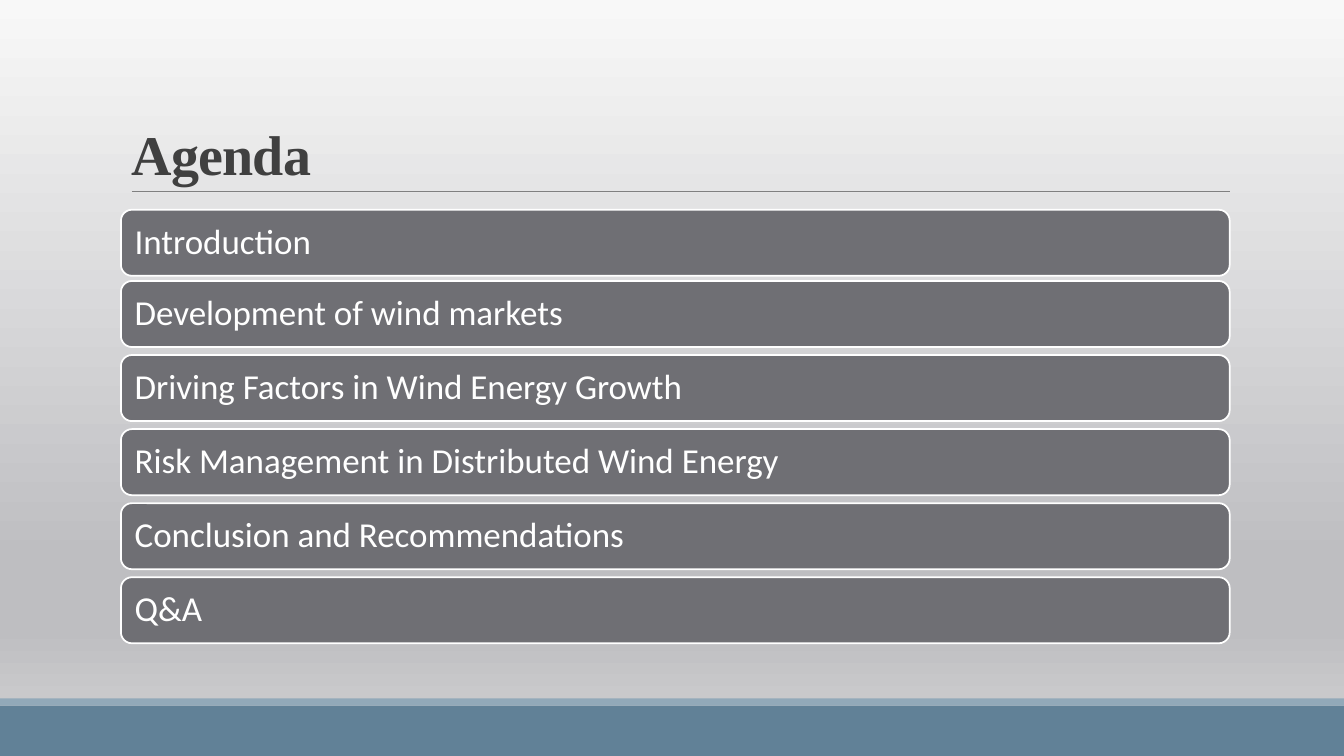
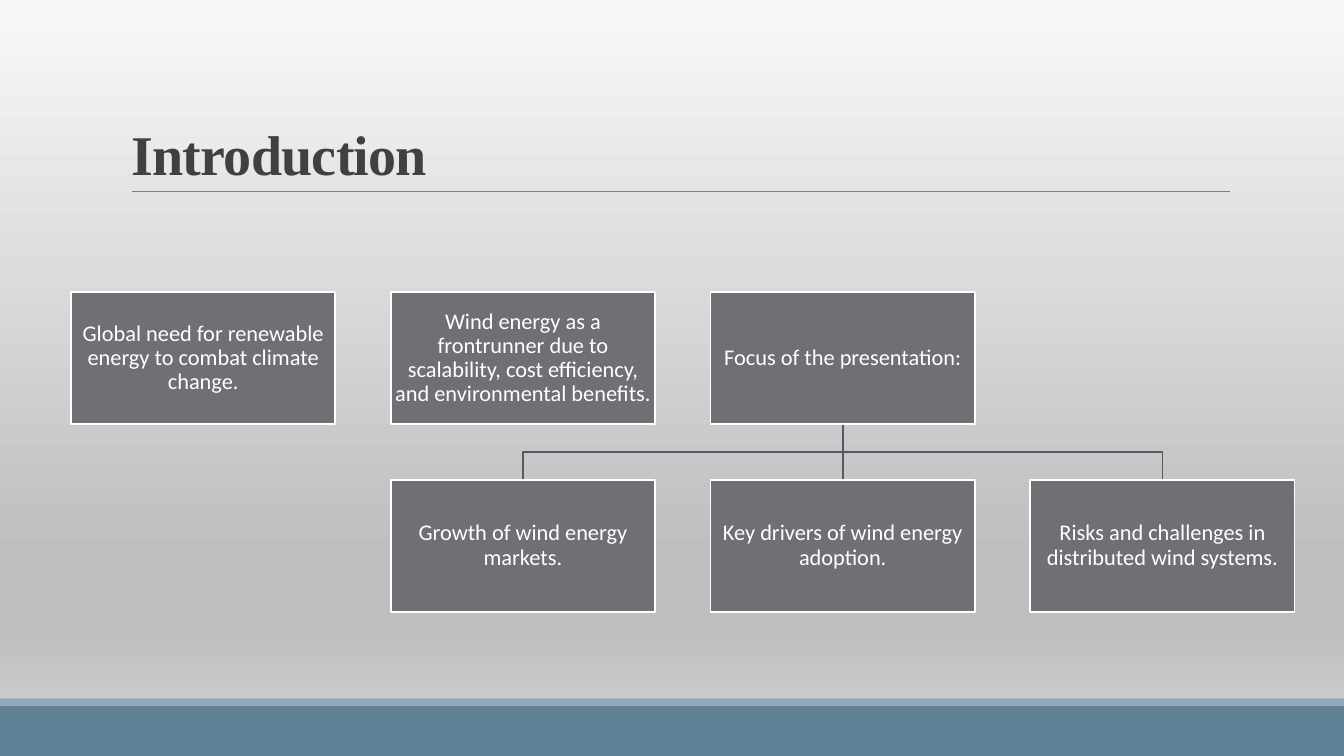
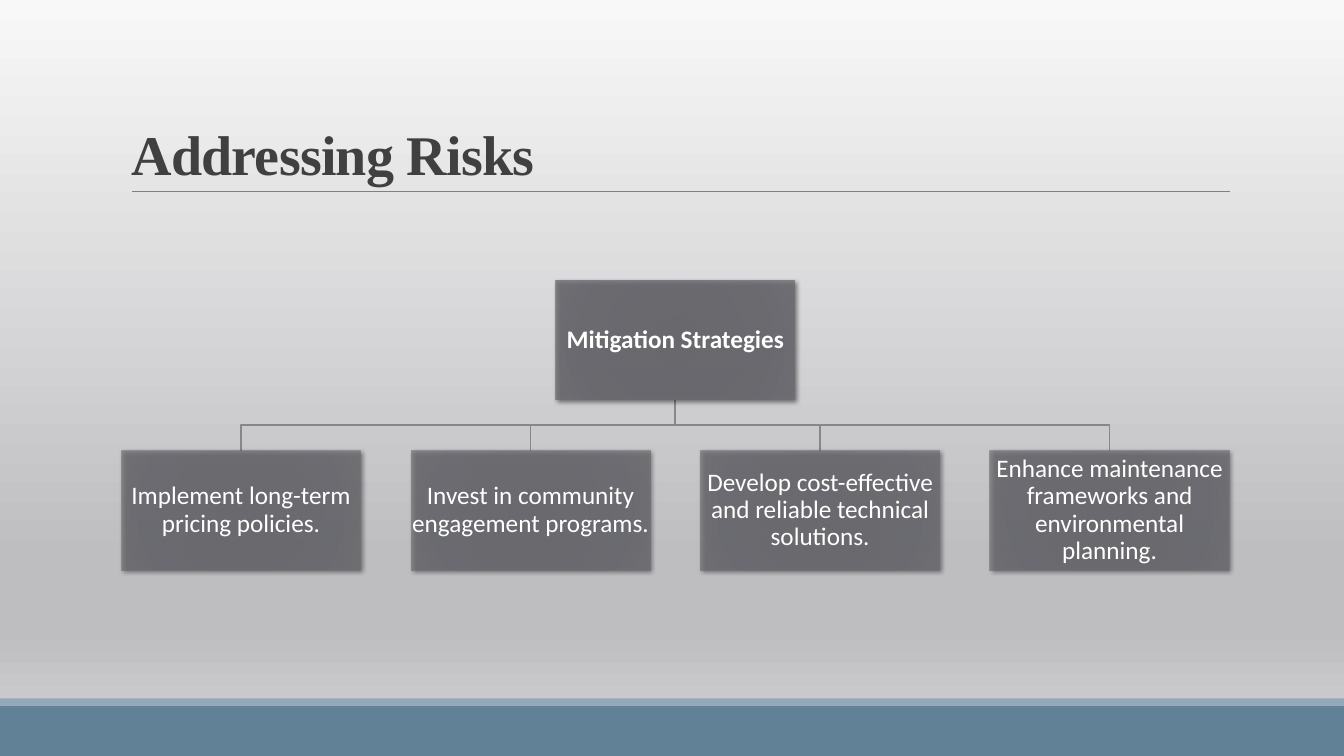
from collections import namedtuple

from lxml.etree import SubElement
from pptx import Presentation
from pptx.dml.color import RGBColor
from pptx.enum.shapes import MSO_CONNECTOR, MSO_SHAPE
from pptx.enum.text import MSO_ANCHOR, PP_ALIGN
from pptx.oxml.ns import qn
from pptx.util import Pt

SLIDE_WIDTH, SLIDE_HEIGHT = 960, 540

WHITE = RGBColor(0xFF, 0xFF, 0xFF)
TITLE_GRAY = RGBColor(0x40, 0x40, 0x40)
RULE_GRAY = RGBColor(0x80, 0x80, 0x80)
BOX_GRAY = RGBColor(0x6F, 0x6F, 0x74)
DARK_BRANCH = RGBColor(0x59, 0x59, 0x5D)
LIGHT_BRANCH = RGBColor(0x87, 0x87, 0x8B)
BAND_BLUE = RGBColor(0x61, 0x81, 0x97)
STRIPE_BLUE = RGBColor(0x92, 0xA9, 0xB9)

BACKGROUND_STOPS = [
    (0, RGBColor(0xF8, 0xF8, 0xF8)),
    (74, RGBColor(0xBE, 0xBE, 0xC1)),
    (83, RGBColor(0xBE, 0xBE, 0xC1)),
    (100, RGBColor(0xD4, 0xD4, 0xD5)),
]
GLASS_STOPS = [
    (0, RGBColor(0x67, 0x67, 0x6D)),
    (34, RGBColor(0x68, 0x68, 0x6E)),
    (70, RGBColor(0x69, 0x69, 0x70)),
    (100, BOX_GRAY),
]

TITLE_FONT = "Times New Roman"
BODY_FONT = "Calibri"
BRANCH_WIDTH = 1.25

Box = namedtuple("Box", "left top width height")


def center(box):
    return box.left + box.width / 2


def bottom(box):
    return box.top + box.height


def row_of_boxes(first, pitch, count):
    return [first._replace(left=first.left + pitch * i) for i in range(count)]


def set_gradient(owner, fill, stops, opacity=100, radial=False):
    """Give the fill, found inside the owner's XML, any number of stops."""
    fill.gradient()
    gradient = owner.element.find(".//" + qn("a:gradFill"))
    for child in list(gradient):
        gradient.remove(child)
    stop_list = SubElement(gradient, qn("a:gsLst"))
    for position, color in stops:
        stop = SubElement(stop_list, qn("a:gs"), pos=str(position * 1000))
        color_element = SubElement(stop, qn("a:srgbClr"), val=str(color))
        if opacity < 100:
            SubElement(color_element, qn("a:alpha"), val=str(opacity * 1000))
    if radial:
        circle = SubElement(gradient, qn("a:path"), path="circle")
        SubElement(circle, qn("a:fillToRect"), dict.fromkeys("ltrb", "100000"))
    else:
        SubElement(gradient, qn("a:lin"), ang="5400000", scaled="0")


def add_soft_shadow(shape):
    effects = shape.element.spPr.find(qn("a:effectLst"))
    shadow = SubElement(effects, qn("a:outerShdw"), blurRad=str(Pt(3.5)),
                        dist=str(Pt(2)), dir="2700000", algn="br", rotWithShape="0")
    color = SubElement(shadow, qn("a:srgbClr"), val="000000")
    SubElement(color, qn("a:alpha"), val="60000")


def add_line(slide, x1, y1, x2, y2, color, width):
    line = slide.shapes.add_connector(
        MSO_CONNECTOR.STRAIGHT, Pt(x1), Pt(y1), Pt(x2), Pt(y2))
    line.line.color.rgb = color
    line.line.width = Pt(width)
    SubElement(line.element.spPr, qn("a:effectLst"))


def add_plain_shape(slide, box, color, kind=MSO_SHAPE.RECTANGLE):
    shape = slide.shapes.add_shape(kind, *map(Pt, box))
    shape.shadow.inherit = False
    shape.fill.solid()
    shape.fill.fore_color.rgb = color
    shape.line.fill.background()
    return shape


def write(shape, text, size, color, font=BODY_FONT, bold=False, spacing=0.9,
          align=PP_ALIGN.LEFT, anchor=MSO_ANCHOR.MIDDLE):
    frame = shape.text_frame
    frame.word_wrap = True
    frame.vertical_anchor = anchor
    paragraph = frame.paragraphs[0]
    paragraph.text = text
    paragraph.alignment = align
    paragraph.line_spacing = spacing
    paragraph.font.name = font
    paragraph.font.size = Pt(size)
    paragraph.font.bold = bold
    paragraph.font.color.rgb = color
    return paragraph


def add_framed_box(slide, box, text, size, kind=MSO_SHAPE.RECTANGLE,
                   align=PP_ALIGN.LEFT):
    shape = add_plain_shape(slide, box, BOX_GRAY, kind)
    shape.line.color.rgb = WHITE
    shape.line.width = Pt(1.25)
    write(shape, text, size, WHITE, align=align)
    return shape


def set_tight_margins(shape):
    frame = shape.text_frame
    frame.margin_left = frame.margin_right = Pt(0.8)
    frame.margin_top = frame.margin_bottom = Pt(0.8)


def add_node(slide, box, text):
    shape = add_framed_box(slide, box, text, 16, align=PP_ALIGN.CENTER)
    set_tight_margins(shape)


def add_glass_node(slide, box, text, opacity=70, bold=False):
    """Add a translucent panel; its label is separate so that it casts no shadow."""
    panel = add_plain_shape(slide, box, BOX_GRAY)
    set_gradient(panel, panel.fill, GLASS_STOPS, opacity, radial=True)
    add_soft_shadow(panel)
    label = slide.shapes.add_textbox(*map(Pt, box))
    write(label, text, 18, WHITE, bold=bold, align=PP_ALIGN.CENTER)
    set_tight_margins(label)


def add_branch(slide, parent, child, color):
    """Link a parent box to a box below it, with square corners halfway."""
    start, end = center(parent), center(child)
    if abs(start - end) < 1:
        add_line(slide, start, bottom(parent), start, child.top, color, BRANCH_WIDTH)
        return
    middle = (bottom(parent) + child.top) / 2
    outline = slide.shapes.build_freeform(Pt(start), Pt(bottom(parent)))
    corners = [(start, middle), (end, middle), (end, child.top)]
    outline.add_line_segments([(Pt(x), Pt(y)) for x, y in corners], close=False)
    branch = outline.convert_to_shape()
    branch.shadow.inherit = False
    branch.fill.background()
    branch.line.color.rgb = color
    branch.line.width = Pt(BRANCH_WIDTH)


def add_titled_slide(presentation, title):
    slide = presentation.slides.add_slide(presentation.slide_layouts[6])
    set_gradient(slide, slide.background.fill, BACKGROUND_STOPS)
    add_plain_shape(slide, Box(0, 504, SLIDE_WIDTH, 36), BAND_BLUE)
    add_plain_shape(slide, Box(0, 498.8, SLIDE_WIDTH, 5.2), STRIPE_BLUE)
    add_line(slide, 94.3, 136.6, 878.8, 136.6, RULE_GRAY, 0.5)
    title_box = slide.shapes.add_textbox(*map(Pt, Box(86.8, 22.6, 792, 114.6)))
    paragraph = write(title_box, title, 40, TITLE_GRAY, TITLE_FONT, bold=True,
                      spacing=0.85, anchor=MSO_ANCHOR.BOTTOM)
    paragraph.runs[0].font._element.set("spc", "-50")
    return slide


def add_agenda(slide, area, items):
    """Stack one bar per item; the first gap is slightly tighter."""
    bar_height, pitch, tightening = 47.2, 52.9, 2
    for index, item in enumerate(items):
        top = area.top + pitch * index - (tightening if index else 0)
        bar = Box(area.left, top, area.width, bar_height)
        shape = add_framed_box(slide, bar, item, 25, kind=MSO_SHAPE.ROUNDED_RECTANGLE)
        frame = shape.text_frame
        frame.margin_left = frame.margin_right = Pt(7.5)


def add_topic_tree(slide, area, topics, subtopics):
    """Place the topics in a row, and subtopics below, one column further right."""
    pitch = 228.4
    first_topic = Box(area.left, area.top, 188.8, 94.4)
    first_subtopic = first_topic._replace(
        left=area.left + pitch, top=bottom(area) - first_topic.height)
    topic_boxes = row_of_boxes(first_topic, pitch, len(topics))
    subtopic_boxes = row_of_boxes(first_subtopic, pitch, len(subtopics))
    for box in reversed(subtopic_boxes):
        add_branch(slide, topic_boxes[-1], box, DARK_BRANCH)
    for box, text in zip(topic_boxes + subtopic_boxes, topics + subtopics):
        add_node(slide, box, text)


def add_strategy_tree(slide, area, heading, strategies):
    """Center the heading over an evenly spread row of strategies."""
    width, height = 170.8, 85.4
    pitch = (area.width - width) / (len(strategies) - 1)
    heading_box = Box(center(area) - width / 2, area.top, width, height)
    first = Box(area.left, bottom(area) - height, width, height)
    boxes = row_of_boxes(first, pitch, len(strategies))
    for box in reversed(boxes):
        add_branch(slide, heading_box, box, LIGHT_BRANCH)
    add_glass_node(slide, heading_box, heading, opacity=80, bold=True)
    for box, text in zip(boxes, strategies):
        add_glass_node(slide, box, text)


def main():
    presentation = Presentation()
    presentation.slide_width = Pt(SLIDE_WIDTH)
    presentation.slide_height = Pt(SLIDE_HEIGHT)

    agenda = add_titled_slide(presentation, "Agenda")
    add_agenda(agenda, Box(86.4, 149.8, 792, 310), [
        "Introduction",
        "Development of wind markets",
        "Driving Factors in Wind Energy Growth",
        "Risk Management in Distributed Wind Energy",
        "Conclusion and Recommendations",
        "Q&A",
    ])

    introduction = add_titled_slide(presentation, "Introduction")
    add_topic_tree(introduction, Box(50.8, 208.6, 874, 228.5), [
        "Global need for renewable energy to combat climate change.",
        "Wind energy as a frontrunner due to scalability, cost efficiency, "
        "and environmental benefits.",
        "Focus of the presentation:",
    ], [
        "Growth of wind energy markets.",
        "Key drivers of wind energy adoption.",
        "Risks and challenges in distributed wind systems.",
    ])

    risks = add_titled_slide(presentation, "Addressing Risks")
    add_strategy_tree(risks, Box(86.8, 200.2, 791.2, 207), "Mitigation Strategies", [
        "Implement long-term pricing policies.",
        "Invest in community engagement programs.",
        "Develop cost-effective and reliable technical solutions.",
        "Enhance maintenance frameworks and environmental planning.",
    ])

    presentation.save("out.pptx")


if __name__ == "__main__":
    main()
